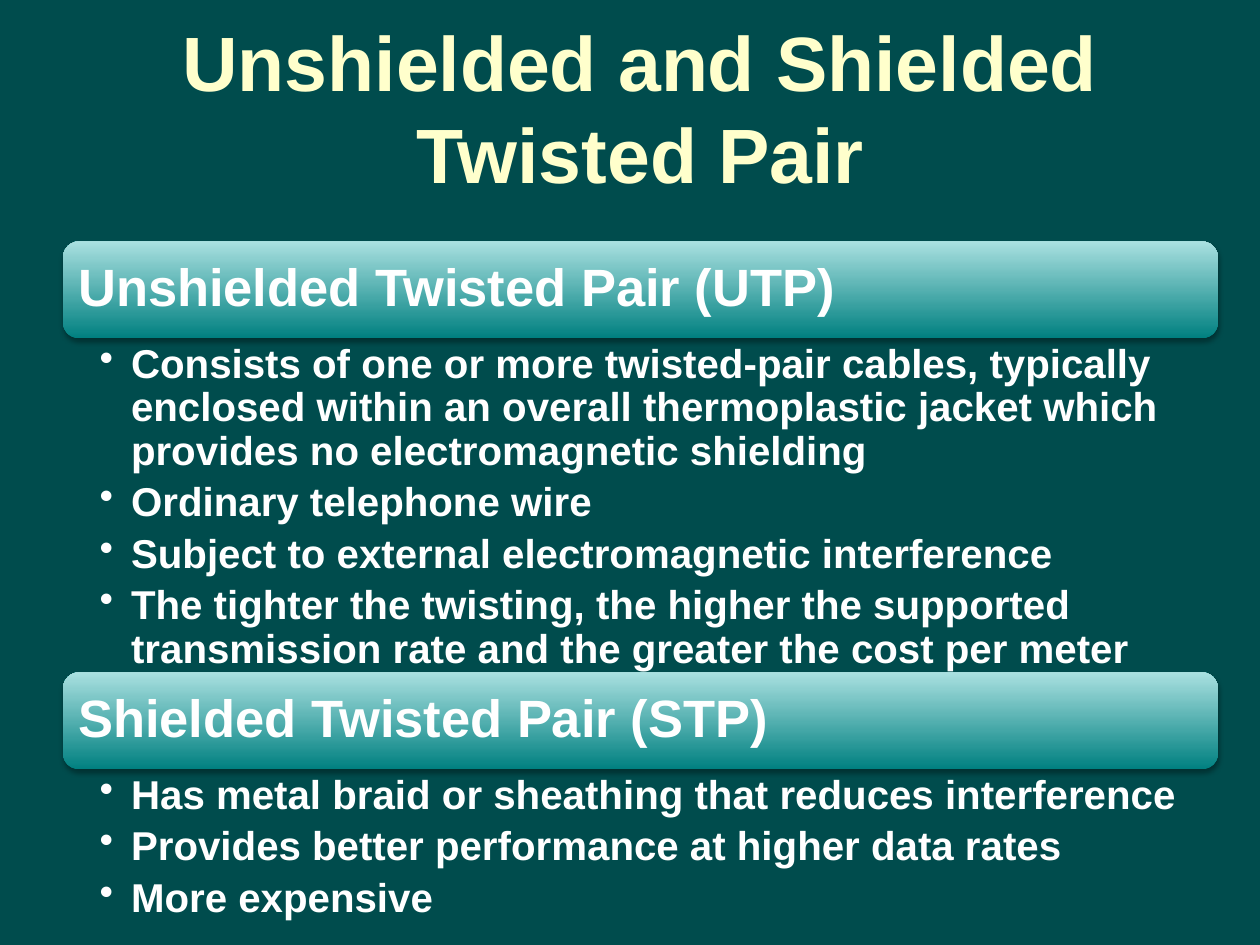
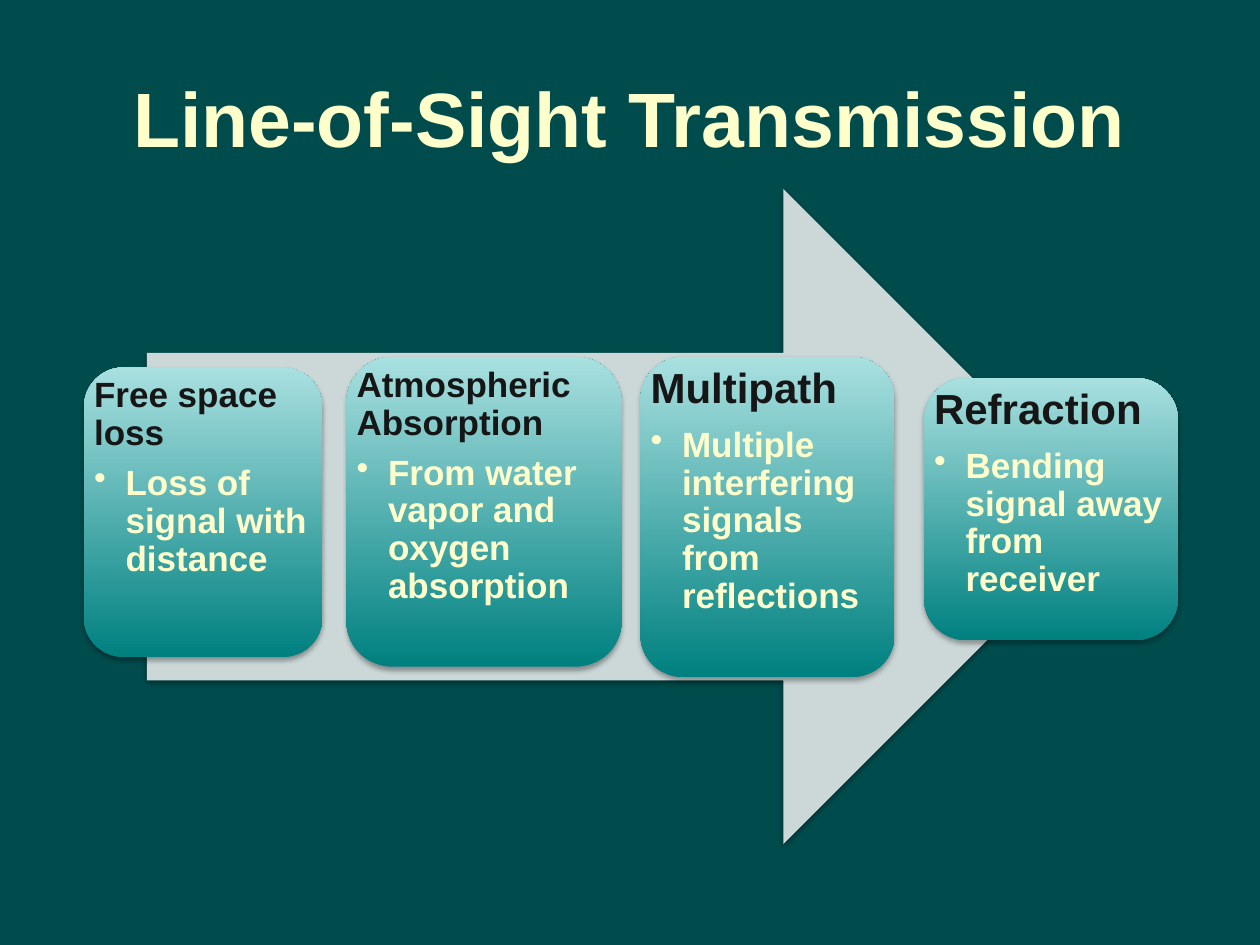
import dataclasses

import pptx
import pptx.dml.color
import pptx.enum.shapes
import pptx.enum.text
import pptx.oxml
import pptx.oxml.ns
import pptx.util

RGBColor = pptx.dml.color.RGBColor
Shapes = pptx.enum.shapes.MSO_SHAPE
Anchor = pptx.enum.text.MSO_ANCHOR
Align = pptx.enum.text.PP_ALIGN
Pt = pptx.util.Pt
Inches = pptx.util.Inches

BACKGROUND = RGBColor(0x00, 0x4C, 0x4D)
CREAM = RGBColor(0xFF, 0xFF, 0xCC)
WHITE = RGBColor(0xFF, 0xFF, 0xFF)
INK = RGBColor(0x16, 0x16, 0x16)
TEAL = RGBColor(0x00, 0x80, 0x80)
PALE_TEAL = RGBColor(0xA9, 0xE0, 0xE0)
ARROW_GREY = RGBColor(0xCC, 0xD8, 0xD8)

FONT = "Arial"
WIDTH, HEIGHT = Inches(10), Inches(7.5)
COLUMNS, ROWS = 120, 90
HANGING_INDENT = Inches(0.25)
SHADOW = (
    f'<a:outerShdw {pptx.oxml.ns.nsdecls("a")} blurRad="{Pt(3.1)}" dist="{Pt(1.8)}"'
    ' dir="5400000" rotWithShape="0"><a:srgbClr val="000000">'
    '<a:alpha val="35000"/></a:srgbClr></a:outerShdw>'
)


@dataclasses.dataclass(frozen=True)
class Area:
    """A rectangle in grid columns and rows."""
    column: float
    row: float
    columns: float
    rows: float

    def emu(self) -> tuple[int, ...]:
        across, down = WIDTH / COLUMNS, HEIGHT / ROWS
        return tuple(round(n) for n in (self.column * across, self.row * down,
                                        self.columns * across, self.rows * down))


@dataclasses.dataclass(frozen=True)
class Style:
    """Paragraph format; gap_after is a share of the text size."""
    size: float
    color: RGBColor
    gap_after: float = 0
    line_spacing: float = 0.9
    alignment: Align = Align.LEFT
    bulleted: bool = False


@dataclasses.dataclass(frozen=True)
class Section:
    heading: str
    points: tuple[str, ...]
    body_rows: float


@dataclasses.dataclass(frozen=True)
class Card:
    heading: str
    effect: str
    area: Area
    heading_size: float


TITLE = Style(44, CREAM, line_spacing=1, alignment=Align.CENTER)
SECTION_HEADING = Style(30, WHITE, 0.35)
SECTION_POINT = Style(23, WHITE, 0.2, bulleted=True)
CARD_EFFECT = Style(20, CREAM, 0.15, bulleted=True)

SECTION_LEFT, SECTION_TOP, SECTION_WIDTH, BAR_ROWS = 6, 23, 110, 9.24
SECTIONS = (
    Section("Unshielded Twisted Pair (UTP)", (
        "Consists of one or more twisted-pair cables, typically enclosed within an "
        "overall thermoplastic jacket which provides no electromagnetic shielding",
        "Ordinary telephone wire",
        "Subject to external electromagnetic interference",
        "The tighter the twisting, the higher the supported transmission rate "
        "and the greater the cost per meter",
    ), 31.8),
    Section("Shielded Twisted Pair (STP)", (
        "Has metal braid or sheathing that reduces interference",
        "Provides better performance at higher data rates",
        "More expensive",
    ), 14.64),
)
CARDS = (
    Card("Free space loss", "Loss of signal with distance",
         Area(8, 35, 22.7, 27.6), 20),
    Card("Atmospheric Absorption", "From water vapor and oxygen absorption",
         Area(33, 34, 26.2, 29.5), 20),
    Card("Multipath", "Multiple interfering signals from reflections",
         Area(61, 34, 24.2, 30.5), 24),
    Card("Refraction", "Bending signal away from receiver",
         Area(88, 36, 24.2, 25), 24),
)


def add_text(slide, area: Area, lines: list[tuple[str, Style]],
             insets: tuple[float, float, float, float],
             anchor: Anchor = Anchor.TOP) -> None:
    """Insets are left, top, right and bottom, in inches."""
    frame = slide.shapes.add_textbox(*area.emu()).text_frame
    left, top, right, bottom = map(Inches, insets)
    frame_format = {
        "word_wrap": True, "vertical_anchor": anchor,
        "margin_left": left, "margin_top": top,
        "margin_right": right, "margin_bottom": bottom,
    }
    for key, value in frame_format.items():
        setattr(frame, key, value)
    for index, (words, style) in enumerate(lines):
        paragraph = frame.add_paragraph() if index else frame.paragraphs[0]
        write_line(paragraph, words, style)


def write_line(paragraph, words: str, style: Style) -> None:
    run = paragraph.add_run()
    run.text = words
    formats = (
        (paragraph, {"alignment": style.alignment, "line_spacing": style.line_spacing,
                     "space_after": Pt(style.size * style.gap_after)}),
        (run.font, {"name": FONT, "size": Pt(style.size), "bold": True}),
        (run.font.color, {"rgb": style.color}),
    )
    for target, values in formats:
        for key, value in values.items():
            setattr(target, key, value)
    if style.bulleted:
        properties = paragraph._p.get_or_add_pPr()
        properties.set("marL", str(HANGING_INDENT))
        properties.set("indent", str(-HANGING_INDENT))
        properties.append(pptx.oxml.parse_xml(
            f'<a:buChar {pptx.oxml.ns.nsdecls("a")} char="•"/>'))


def add_raised_shape(slide, preset: Shapes, area: Area):
    """Add a shape without outline that casts a soft shadow downwards."""
    shape = slide.shapes.add_shape(preset, *area.emu())
    shape.line.fill.background()
    shape.shadow.inherit = False
    effects = shape._element.spPr.find(pptx.oxml.ns.qn("a:effectLst"))
    effects.append(pptx.oxml.parse_xml(SHADOW))
    return shape


def add_teal_panel(slide, area: Area) -> None:
    fill = add_raised_shape(slide, Shapes.ROUNDED_RECTANGLE, area).fill
    fill.gradient()
    fill.gradient_angle = 90
    for stop, color, position in zip(fill.gradient_stops, (TEAL, PALE_TEAL), (0, 1)):
        stop.color.rgb = color
        stop.position = position


def add_titled_slide(deck, title: str, area: Area):
    slide = deck.slides.add_slide(deck.slide_layouts[6])
    slide.background.fill.solid()
    slide.background.fill.fore_color.rgb = BACKGROUND
    add_text(slide, area, [(title, TITLE)], (0.1, 0.05, 0.1, 0.05), Anchor.MIDDLE)
    return slide


def build_twisted_pair(deck) -> None:
    slide = add_titled_slide(deck, "Unshielded and Shielded Twisted Pair",
                             Area(7, 2, 108, 16.3))
    row = SECTION_TOP
    for section in SECTIONS:
        bar = Area(SECTION_LEFT, row, SECTION_WIDTH, BAR_ROWS)
        body = Area(SECTION_LEFT, row + BAR_ROWS, SECTION_WIDTH, section.body_rows)
        add_teal_panel(slide, bar)
        add_text(slide, bar, [(section.heading, SECTION_HEADING)],
                 (0.12, 0.12, 0.12, 0.12), Anchor.MIDDLE)
        add_text(slide, body, [(point, SECTION_POINT) for point in section.points],
                 (0.29, 0.04, 0.23, 0.04))
        row += BAR_ROWS + section.body_rows


def build_line_of_sight(deck) -> None:
    slide = add_titled_slide(deck, "Line-of-Sight Transmission", Area(6, 3.6, 108, 15))
    arrow = add_raised_shape(slide, Shapes.RIGHT_ARROW, Area(14, 18, 91.8, 62.4))
    arrow.fill.solid()
    arrow.fill.fore_color.rgb = ARROW_GREY
    for card in CARDS:
        add_teal_panel(slide, card.area)
        heading = Style(card.heading_size, INK, 0.35)
        add_text(slide, card.area, [(card.heading, heading), (card.effect, CARD_EFFECT)],
                 (0.08, 0.08, 0.08, 0.08))


def main() -> None:
    deck = pptx.Presentation()
    deck.slide_width, deck.slide_height = WIDTH, HEIGHT
    build_twisted_pair(deck)
    build_line_of_sight(deck)
    deck.save("out.pptx")


if __name__ == "__main__":
    main()
